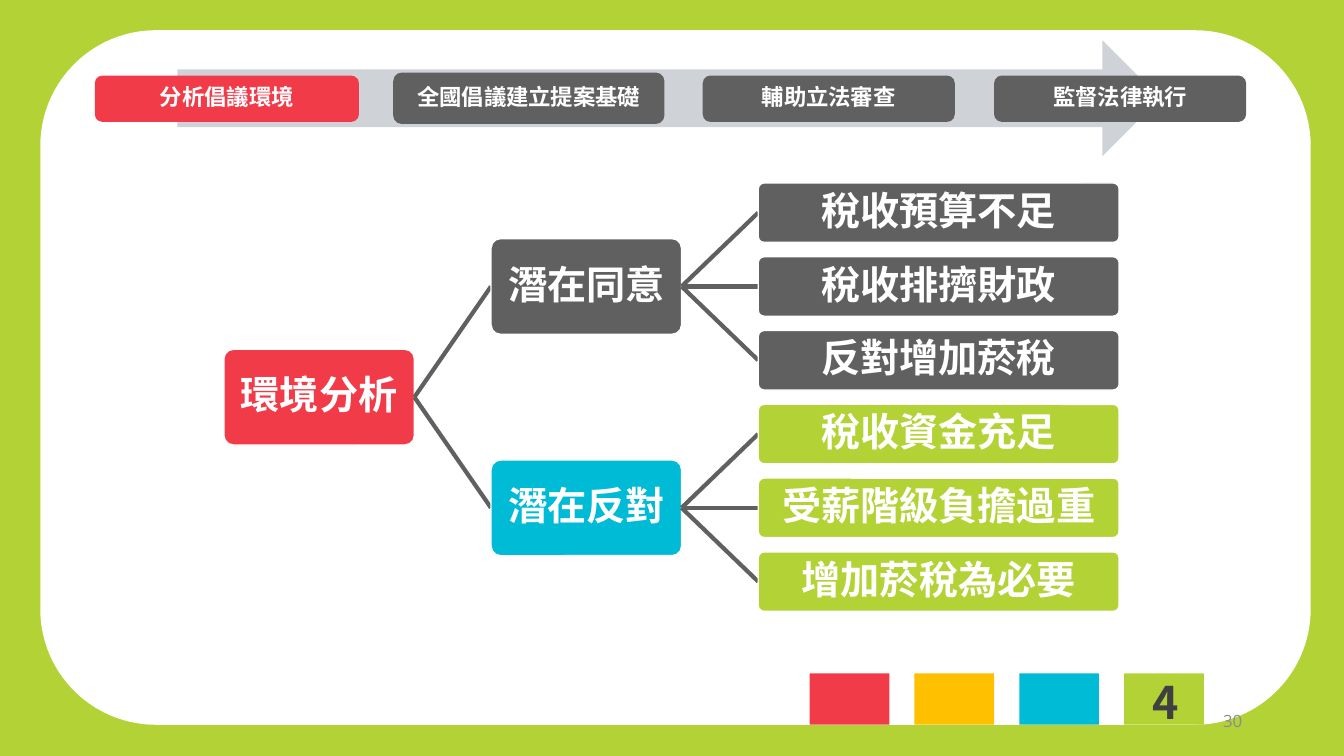
import pptx
import pptx.dml.color
import pptx.enum.shapes
import pptx.enum.text
import pptx.oxml.ns
import pptx.util
from lxml import etree

RGBColor = pptx.dml.color.RGBColor
SHAPE = pptx.enum.shapes.MSO_SHAPE
ALIGN = pptx.enum.text.PP_ALIGN
ANCHOR = pptx.enum.text.MSO_ANCHOR

RED = RGBColor(0xF2, 0x3B, 0x49)
GREEN = RGBColor(0xB3, 0xD2, 0x36)
CYAN = RGBColor(0x00, 0xBB, 0xD6)
AMBER = RGBColor(0xFF, 0xC0, 0x00)
GREY = RGBColor(0x60, 0x60, 0x60)
PALE = RGBColor(0xCF, 0xD2, 0xD6)
DARK = RGBColor(0x40, 0x40, 0x40)
MUTED = RGBColor(0x8C, 0x8C, 0x8C)
WHITE = RGBColor(0xFF, 0xFF, 0xFF)
CJK = "Noto Sans CJK SC"

# Content: step label, colour, box in px
STEPS = [
    ("分析倡議環境", RED, (94, 75, 262, 46)),
    ("全國倡議建立提案基礎", GREY, (390, 72, 269, 51)),
    ("輔助立法審查", GREY, (697, 75, 250, 46)),
    ("監督法律執行", GREY, (986, 75, 250, 46)),
]
ROOT = "環境分析"
# Branch label, branch colour, leaf colour, leaves
BRANCHES = [
    ("潛在同意", GREY, GREY, ["稅收預算不足", "稅收排擠財政", "反對增加菸稅"]),
    ("潛在反對", CYAN, GREEN, ["稅收資金充足", "受薪階級負擔過重", "增加菸稅為必要"]),
]
SQUARES = [RED, AMBER, CYAN, GREEN]
CHAPTER, PAGE_NUMBER = "4", "30"

# Tree layout in px
ROOT_X, BRANCH_X, LEAF_X = 222, 487, 752
NODE_W, NODE_H, LEAF_W, LEAF_H = 189, 95, 358, 59
FIRST_LEAF_Y, LAST_LEAF_Y = 211, 577  # centres


def px(length):
    return pptx.util.Emu(round(length * 9144))  # 100 px to the inch


deck = pptx.Presentation()
deck.slide_width, deck.slide_height = px(1333), px(750)
page = deck.slides.add_slide(deck.slide_layouts[6])
page.background.fill.solid()
page.background.fill.fore_color.rgb = GREEN


def add_block(kind, box, colour):
    block = page.shapes.add_shape(kind, *map(px, box))
    block.shadow.inherit = False
    block.fill.solid()
    block.fill.fore_color.rgb = colour
    block.line.fill.background()
    return block


def write(shape, text, size, colour, font=CJK, bold=True, align=ALIGN.CENTER, inset=None):
    frame = shape.text_frame
    frame.word_wrap = True
    if inset is not None:
        frame.margin_left = frame.margin_right = px(inset)
        frame.margin_top = frame.margin_bottom = px(inset)
    frame.vertical_anchor = ANCHOR.MIDDLE
    para = frame.paragraphs[0]
    para.text = text
    para.alignment = align
    para.line_spacing = 0.9 if inset is not None else 1.0
    para.font.size = pptx.util.Pt(size)
    para.font.bold = bold
    para.font.color.rgb = colour
    para.font.name = font
    # East Asian typeface follows the Latin one
    qn = pptx.oxml.ns.qn
    defaults = para._p.pPr.find(qn("a:defRPr"))
    etree.SubElement(defaults, qn("a:ea")).set("typeface", font)


def add_node(text, x, middle, width, height, colour):
    node = add_block(SHAPE.ROUNDED_RECTANGLE, (x, middle - height / 2, width, height), colour)
    node.adjustments[0] = 0.1
    node.line.color.rgb = WHITE
    node.line.width = pptx.util.Pt(1)
    write(node, text, 28, WHITE, inset=2)


def add_link(x1, y1, x2, y2):
    link = page.shapes.add_connector(
        pptx.enum.shapes.MSO_CONNECTOR.STRAIGHT, px(x1), px(y1), px(x2), px(y2))
    link.line.color.rgb = GREY
    link.line.width = pptx.util.Pt(3)
    etree.SubElement(link._element.spPr, pptx.oxml.ns.qn("a:effectLst"))


# White panel and page number
add_block(SHAPE.ROUNDED_RECTANGLE, (40, 30, 1260, 689), WHITE)
number = page.shapes.add_textbox(*map(px, (942, 695, 300, 40)))
write(number, PAGE_NUMBER, 12, MUTED, "Open Sans", False, ALIGN.RIGHT)

# Coloured squares with the chapter number
for index, colour in enumerate(SQUARES):
    add_block(SHAPE.RECTANGLE, (803 + 104 * index, 668, 79, 51), colour)
chapter = page.shapes.add_textbox(*map(px, (1133, 664, 45, 64)))
write(chapter, CHAPTER, 32, DARK, align=ALIGN.LEFT)

# Process arrow with its steps
add_block(SHAPE.RIGHT_ARROW, (176, 40, 975, 115), PALE)
for label, colour, box in STEPS:
    write(add_block(SHAPE.ROUNDED_RECTANGLE, box, colour), label, 16, WHITE, inset=7)

# Tree: each parent is centred on its children
leaf_count = sum(len(leaves) for *_, leaves in BRANCHES)
pitch = (LAST_LEAF_Y - FIRST_LEAF_Y) / (leaf_count - 1)
root_y = (FIRST_LEAF_Y + LAST_LEAF_Y) / 2
add_node(ROOT, ROOT_X, root_y, NODE_W, NODE_H, RED)
next_y = FIRST_LEAF_Y
for label, colour, leaf_colour, leaves in BRANCHES:
    branch_y = next_y + pitch * (len(leaves) - 1) / 2
    add_link(ROOT_X + NODE_W, root_y, BRANCH_X, branch_y)
    add_node(label, BRANCH_X, branch_y, NODE_W, NODE_H, colour)
    for leaf in leaves:
        add_link(BRANCH_X + NODE_W, branch_y, LEAF_X, next_y)
        add_node(leaf, LEAF_X, next_y, LEAF_W, LEAF_H, leaf_colour)
        next_y += pitch

deck.save("out.pptx")
